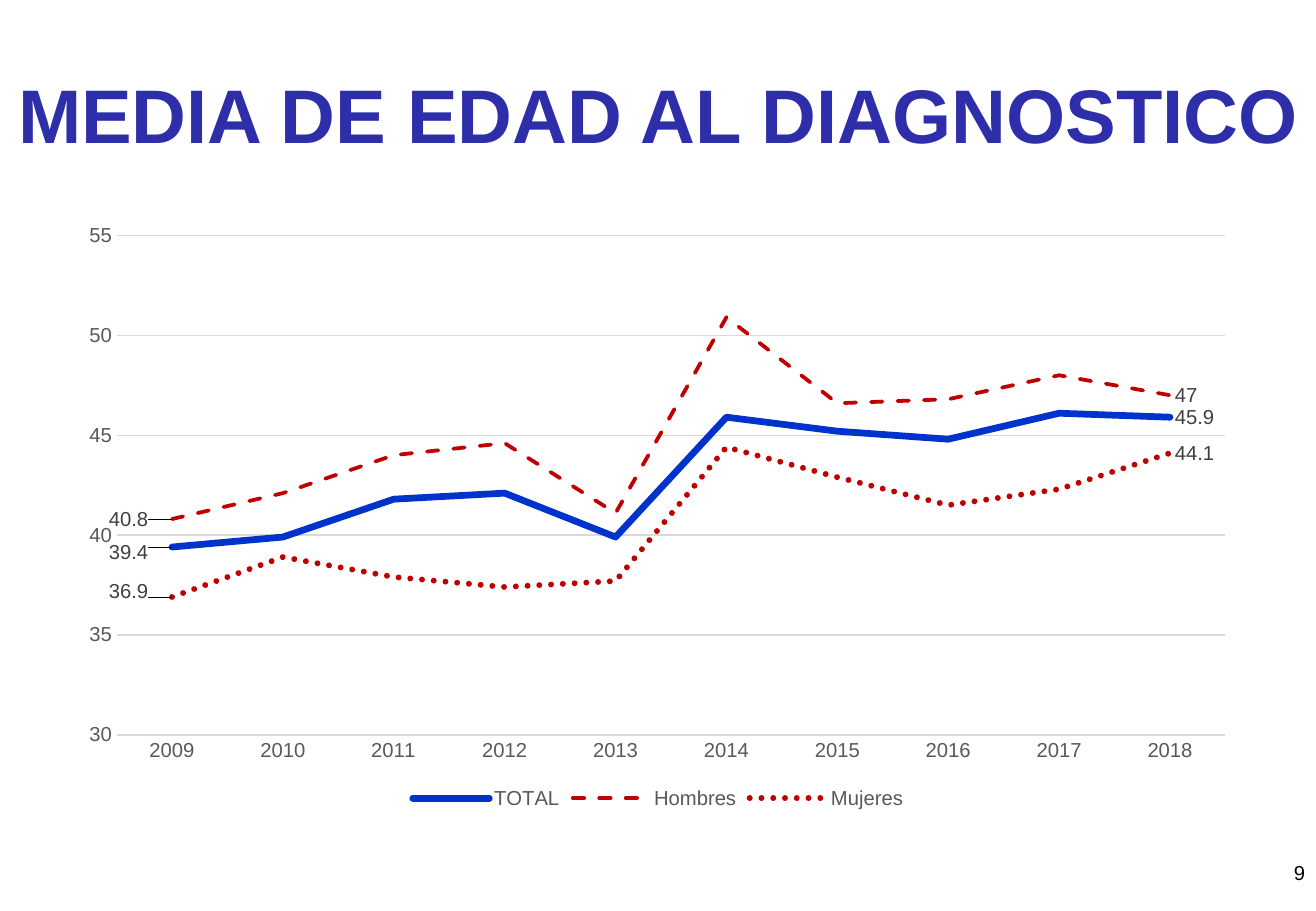
from dataclasses import dataclass

from pptx import Presentation
from pptx.chart.data import CategoryChartData
from pptx.dml.color import RGBColor
from pptx.enum.chart import XL_CHART_TYPE, XL_LABEL_POSITION, XL_LEGEND_POSITION, XL_MARKER_STYLE, XL_TICK_MARK
from pptx.enum.dml import MSO_LINE
from pptx.enum.text import MSO_ANCHOR, MSO_AUTO_SIZE, PP_ALIGN
from pptx.oxml import parse_xml
from pptx.oxml.ns import nsdecls
from pptx.util import Inches, Pt


@dataclass(frozen=True)
class Theme:
    font: str = "Arial"
    title: RGBColor = RGBColor(0x2E, 0x2E, 0xAA)
    text: RGBColor = RGBColor(0, 0, 0)
    axis: RGBColor = RGBColor(0x59, 0x59, 0x59)
    label: RGBColor = RGBColor(0x40, 0x40, 0x40)
    grid: RGBColor = RGBColor(0xD9, 0xD9, 0xD9)
    total: RGBColor = RGBColor(0x00, 0x33, 0xCC)
    sexes: RGBColor = RGBColor(0xC0, 0x00, 0x00)
    title_size: Pt = Pt(45)
    text_size: Pt = Pt(12)


theme = Theme()


def set_font(font, color, size=theme.text_size, bold=False):
    font.name, font.size, font.bold = theme.font, size, bold
    font.color.rgb = color


def manual_layout(**settings):
    """Chart layout element; settings follow the schema order."""
    items = "".join(f'<c:{name} val="{value}"/>' for name, value in settings.items())
    return parse_xml(f'<c:layout {nsdecls("c")}><c:manualLayout>{items}</c:manualLayout></c:layout>')


presentation = Presentation()
presentation.slide_width, presentation.slide_height = Inches(10.83), Inches(7.5)
slide = presentation.slides.add_slide(presentation.slide_layouts[5])

# Title
title = slide.shapes.title
title.left, title.top, title.width, title.height = Inches(0), Inches(0.5), Inches(10.83), Inches(0.86)
title.text_frame.text = "MEDIA DE EDAD AL DIAGNOSTICO"
title.text_frame.word_wrap = True
title.text_frame.auto_size = MSO_AUTO_SIZE.SHAPE_TO_FIT_TEXT
title.text_frame.vertical_anchor = MSO_ANCHOR.MIDDLE
heading = title.text_frame.paragraphs[0]
heading.alignment = PP_ALIGN.CENTER
set_font(heading.font, theme.title, theme.title_size, bold=True)

# Mean ages: name, values, colour, line width, dash, shift of the first label
mean_ages = [
    ("TOTAL", (39.4, 39.9, 41.8, 42.1, 39.9, 45.9, 45.2, 44.8, 46.1, 45.9),
     theme.total, 4, MSO_LINE.SOLID, 0.01),
    ("Hombres", (40.8, 42.1, 44, 44.6, 41.1, 50.9, 46.6, 46.8, 48, 47),
     theme.sexes, 2.25, MSO_LINE.DASH, 0),
    ("Mujeres", (36.9, 38.9, 37.9, 37.4, 37.7, 44.4, 42.9, 41.5, 42.3, 44.1),
     theme.sexes, 3.5, MSO_LINE.ROUND_DOT, -0.01),
]
ages_data = CategoryChartData()
ages_data.categories = [str(year) for year in range(2009, 2019)]
for name, ages, *_ in mean_ages:
    ages_data.add_series(name, ages)

# Line chart
chart = slide.shapes.add_chart(
    XL_CHART_TYPE.LINE, Inches(0.54), Inches(1.75), Inches(9.75), Inches(4.95), ages_data).chart
chart.has_title = False
set_font(chart.font, theme.axis)
chart.has_legend = True
chart.legend.position = XL_LEGEND_POSITION.BOTTOM
chart.legend.include_in_layout = False
set_font(chart.legend.font, theme.axis)

# Axes
years, age_scale = chart.category_axis, chart.value_axis
for axis in (years, age_scale):
    axis.major_tick_mark = axis.minor_tick_mark = XL_TICK_MARK.NONE
    set_font(axis.tick_labels.font, theme.axis)
age_scale.minimum_scale, age_scale.maximum_scale, age_scale.major_unit = 30, 55, 5
age_scale.format.line.fill.background()
for rule in (years.format.line, age_scale.major_gridlines.format.line):
    rule.color.rgb = theme.grid
    rule.width = Pt(0.75)

# Plot area
plot_area = chart.element.xpath(".//c:plotArea")[0]
for automatic in plot_area.xpath("./c:layout"):
    plot_area.remove(automatic)
plot_area.insert(0, manual_layout(
    layoutTarget="inner", xMode="edge", yMode="edge", x=0.043, y=0.038, w=0.936, h=0.831))

# Lines, with labels on the first and last year
for series, (_, ages, color, width, dash, shift) in zip(chart.plots[0].series, mean_ages):
    series.smooth = False
    series.marker.style = XL_MARKER_STYLE.NONE
    line = series.format.line
    line.color.rgb, line.width, line.dash_style = color, Pt(width), dash
    series.data_labels.show_value = False
    for index, side in ((0, XL_LABEL_POSITION.LEFT), (len(ages) - 1, XL_LABEL_POSITION.RIGHT)):
        age_label = series.points[index].data_label
        set_font(age_label.font, theme.label)
        age_label.position = side

for outline in chart.element.xpath(".//c:ser/c:spPr/a:ln"):
    outline.set("cap", "rnd")
first_labels = chart.element.xpath('.//c:dLbl[c:idx/@val="0"]')
for first_label, (*_, shift) in zip(first_labels, mean_ages):
    first_label.insert(1, manual_layout(x=-0.016, y=shift))

# Slide number
page_number = slide.shapes.add_textbox(Inches(8.31), Inches(7.03), Inches(2.53), Inches(0.47)).text_frame
page_number.word_wrap = True
page_number.text = "9"
page_number.paragraphs[0].alignment = PP_ALIGN.RIGHT
set_font(page_number.paragraphs[0].font, theme.text)

presentation.save("out.pptx")
